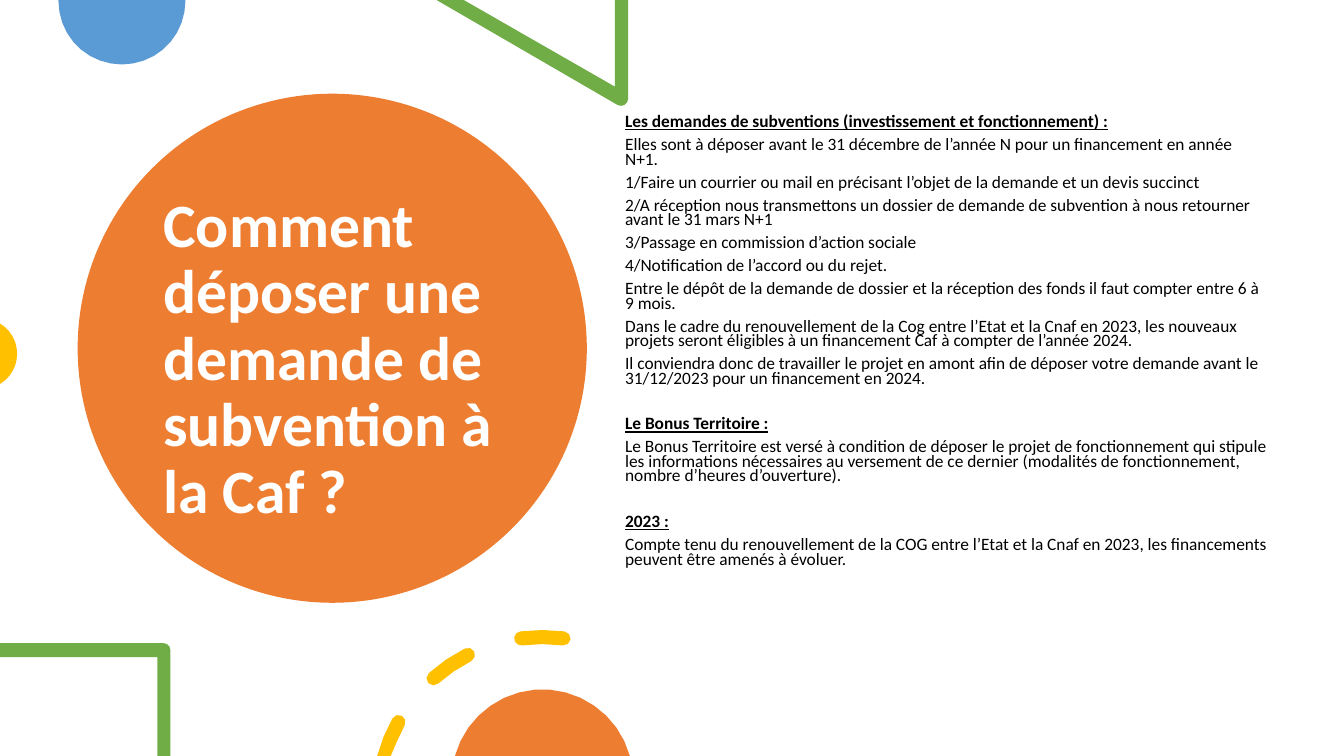
from math import ceil, cos, radians, sin

from pptx import Presentation
from pptx.dml.color import RGBColor
from pptx.enum import shapes, text
from pptx.util import Inches, Pt
from lxml import etree

ORANGE = RGBColor(0xED, 0x7D, 0x31)
BLUE = RGBColor(0x5B, 0x9B, 0xD5)
GREEN = RGBColor(0x70, 0xAD, 0x47)
YELLOW = RGBColor(0xFF, 0xC0, 0x00)
WHITE = RGBColor(0xFF, 0xFF, 0xFF)
BLACK = RGBColor(0, 0, 0)
FONT = "Calibri"
WIDTH, HEIGHT = 13.33, 7.5
GRAIN = 1000  # freeform units per inch

TITLE = "Comment déposer une demande de subvention à la Caf ?"
SECTIONS = [
    ("Les demandes de subventions (investissement et fonctionnement) :", [
        "Elles sont à déposer avant le 31 décembre de l’année N pour un financement en année N+1.",
        "1/Faire un courrier ou mail en précisant l’objet de la demande et un devis succinct",
        "2/A réception nous transmettons un dossier de demande de subvention à nous retourner "
        "avant le 31 mars N+1",
        "3/Passage en commission d’action sociale",
        "4/Notification de l’accord ou du rejet.",
        "Entre le dépôt de la demande de dossier et la réception des fonds il faut compter "
        "entre 6 à 9 mois.",
        "Dans le cadre du renouvellement de la Cog entre l’Etat et la Cnaf en 2023, les nouveaux "
        "projets seront éligibles à un financement Caf à compter de l’année 2024.",
        "Il conviendra donc de travailler le projet en amont afin de déposer votre demande "
        "avant le 31/12/2023 pour un financement en 2024.",
    ]),
    ("Le Bonus Territoire :", [
        "Le Bonus Territoire est versé à condition de déposer le projet de fonctionnement qui "
        "stipule les informations nécessaires au versement de ce dernier (modalités de "
        "fonctionnement, nombre d’heures d’ouverture).",
    ]),
    ("2023 :", [
        "Compte tenu du renouvellement de la COG entre l’Etat et la Cnaf en 2023, les "
        "financements peuvent être amenés à évoluer.",
    ]),
]
# Start and end of each dash, in degrees from the top of its ring
DASHES = [(-74.6, -61.1), (-41.5, -26.9), (-7.4, 7.4)]
RING_X, RING_Y, RING_R, HALF = 5.38, 7.95, 1.63, 0.07


def arc(x, y, r, start, end, pitch=10):
    """Points on a circle, angles clockwise from the top."""
    steps = ceil(abs(end - start) / pitch)
    turns = [radians(start + (end - start) * i / steps) for i in range(steps + 1)]
    return [(x + r * sin(t), y - r * cos(t)) for t in turns]


def cap(angle, turn):
    """Half circle that rounds a dash's end."""
    x = RING_X + RING_R * sin(radians(angle))
    y = RING_Y - RING_R * cos(radians(angle))
    return arc(x, y, HALF, turn, turn + 180, 45)[1:-1]


def dash(start, end):
    """Outline of a round-ended dash, cut off at the slide's bottom edge."""
    points = [*arc(RING_X, RING_Y, RING_R + HALF, start, end), *cap(end, end),
              *arc(RING_X, RING_Y, RING_R - HALF, end, start), *cap(start, start + 180)]
    return [(x, min(y, HEIGHT)) for x, y in points]


def paint(shape, color):
    shape.fill.solid()
    shape.fill.fore_color.rgb = color
    shape.line.fill.background()
    shape.shadow.inherit = False


def draw(slide, color, *outlines):
    first, *others = [[(round(x * GRAIN), round(y * GRAIN)) for x, y in points]
                      for points in outlines]
    pen = slide.shapes.build_freeform(*first[0], scale=Inches(1) / GRAIN)
    pen.add_line_segments(first[1:])
    for points in others:
        pen.move_to(*points[0])
        pen.add_line_segments(points[1:])
    paint(pen.convert_to_shape(), color)


def place(shape, left, top, width, height):
    shape.left, shape.top = Inches(left), Inches(top)
    shape.width, shape.height = Inches(width), Inches(height)
    shape.text_frame.word_wrap = True
    shape.text_frame.auto_size = text.MSO_AUTO_SIZE.NONE


def style(para, size, color, bold, under=False):
    para.alignment = text.PP_ALIGN.LEFT
    for run in para.runs:
        font = run.font
        font.name, font.size, font.bold, font.underline = FONT, Pt(size), bold, under
        font.color.rgb = color


def main():
    deck = Presentation()
    deck.slide_width, deck.slide_height = Inches(WIDTH), Inches(HEIGHT)
    slide = deck.slides.add_slide(deck.slide_layouts[1])
    title, body = slide.placeholders

    # Large disc behind the title
    disc = slide.shapes.add_shape(shapes.MSO_SHAPE.OVAL, Inches(0.77), Inches(0.93),
                                  Inches(5.05), Inches(5.05))
    paint(disc, ORANGE)
    title.element.addprevious(disc.element)

    # Title
    place(title, 1.52, 1.35, 3.54, 4.45)
    title.text_frame.text = TITLE
    title.text_frame.vertical_anchor = text.MSO_ANCHOR.MIDDLE
    title.text_frame.paragraphs[0].line_spacing = 0.9
    style(title.text_frame.paragraphs[0], 44, WHITE, True)

    # Body: underlined headings, each followed by its paragraphs
    place(body, 6.1, 1.1, 6.58, 5.36)
    frame = body.text_frame
    frame.vertical_anchor = text.MSO_ANCHOR.TOP
    lines = [(line, line == head) for head, rest in SECTIONS for line in [head, *rest]]
    for i, (line, head) in enumerate(lines):
        para = frame.add_paragraph() if i else frame.paragraphs[0]
        para.text = line
        para.line_spacing, para.space_after = 0.7, Pt(6)
        para.space_before = Pt(16.2 if head and i else 0)
        style(para, 12.4, BLACK, head, head)
        props = para._p.get_or_add_pPr()
        props.set("marL", "0")
        props.set("indent", "0")
        etree.SubElement(props, "{http://schemas.openxmlformats.org/drawingml/2006/main}buNone")

    # Decoration cut off by the slide's edges
    draw(slide, BLUE, arc(1.21, 0.01, 0.63, 90, 270) + [(0.58, 0), (1.84, 0)])
    draw(slide, GREEN, [(6.23, 0), (6.1, 0), (6.1, 0.86), (4.6, 0), (4.33, 0),
                        *arc(6.16, 0.98, 0.07, 210, 90, 30)])
    draw(slide, YELLOW, arc(-0.18, 3.51, 0.35, 31, 149))
    draw(slide, GREEN, [(0, 6.38), *arc(1.62, 6.45, 0.07, 0, 90, 30), (1.69, HEIGHT),
                        (1.56, HEIGHT), (1.56, 6.52), (0, 6.52)])
    draw(slide, YELLOW, *[dash(*ends) for ends in DASHES])
    draw(slide, ORANGE, arc(RING_X, 7.74, 0.9, -74.5, 74.5))

    deck.save("out.pptx")


if __name__ == "__main__":
    main()
